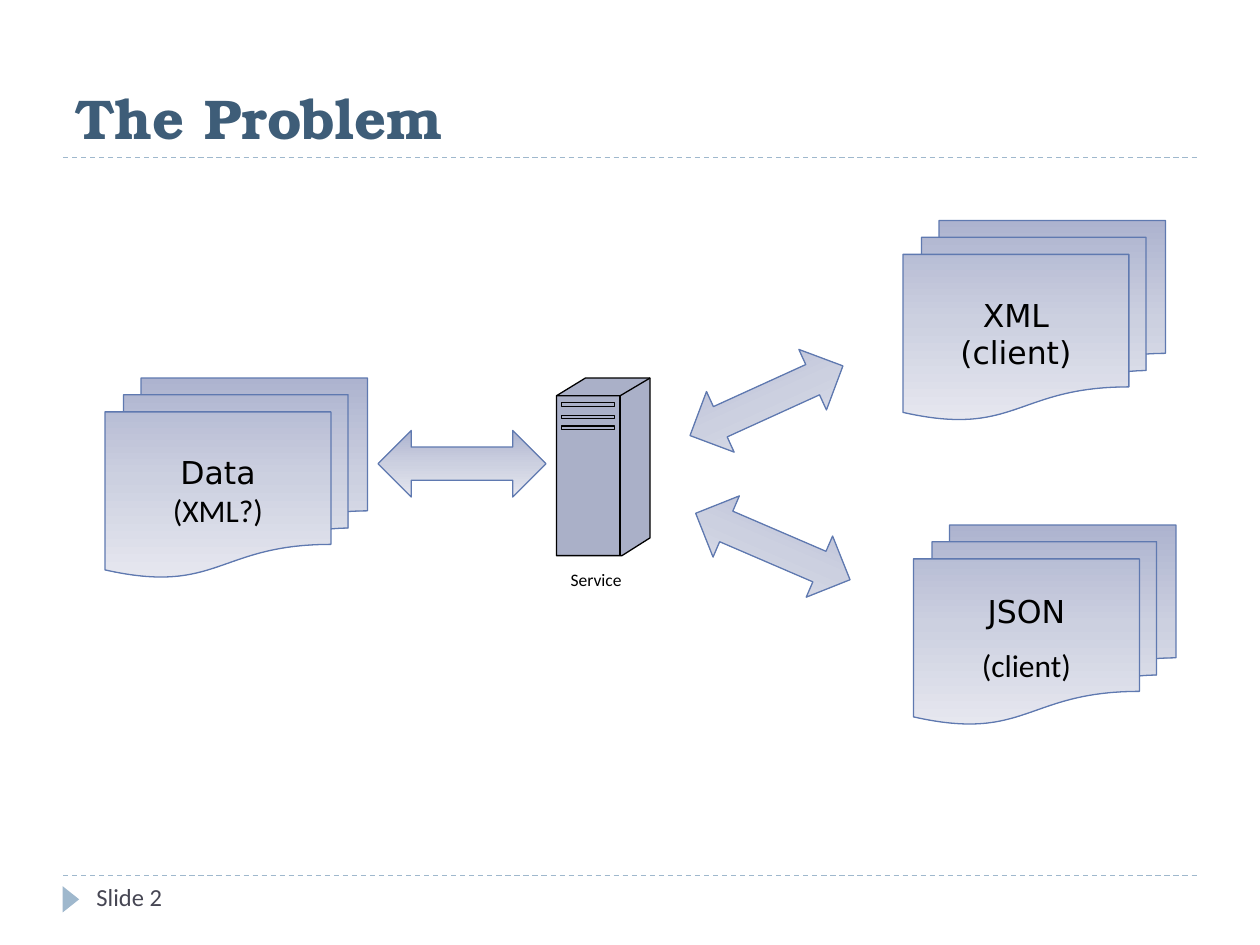
from copy import deepcopy
from dataclasses import dataclass

from lxml import etree
from pptx import Presentation
from pptx.dml.color import RGBColor
from pptx.enum import dml, shapes, text
from pptx.oxml import ns
from pptx.util import Pt


@dataclass(frozen=True)
class Theme:
    """Colours, fonts and type sizes."""
    rule: str = "9FB8CD"
    head: str = "3E5D78"
    foot: str = "464653"
    ink: str = "000000"
    edge: str = "5F79B0"
    steel: str = "AAB0C8"
    fade: tuple = ("ADB3CF", "CCD0E0", "E6E7EF")
    serif: str = "TeX Gyre Bonum"
    sans: str = "Calibri"
    wide: str = "DejaVu Sans"
    title: int = 32
    body: int = 18
    note: int = 14
    label: int = 10
    line: float = 0.75


T = Theme()
SHAPE = shapes.MSO_SHAPE


def rgb(code):
    """Turn a hex code into a colour."""
    return RGBColor.from_string(code)


def write(para, words, face, size, color, bold=False):
    """Add one formatted run to a paragraph."""
    run = para.add_run()
    run.text = words
    font = run.font
    font.name, font.size, font.bold = face, Pt(size), bold
    font.color.rgb = rgb(color)


def stroke(item, color):
    """Give a shape or connector a thin line."""
    item.line.color.rgb = rgb(color)
    item.line.width = Pt(T.line)


def shade(shape):
    """Give a shape the vertical fade and its edge."""
    shape.shadow.inherit = False
    shape.fill.gradient()
    shape.fill.gradient_angle = 270
    stops = shape._element.spPr.find(".//" + ns.qn("a:gsLst"))
    stops.insert(1, deepcopy(stops[0]))
    for i, (stop, color) in enumerate(zip(shape.fill.gradient_stops, T.fade)):
        stop.position = i / 2
        stop.color.rgb = rgb(color)
    stroke(shape, T.edge)


def rule(slide, left, top, width):
    """Draw a dashed line across the slide."""
    line = slide.shapes.add_connector(
        shapes.MSO_CONNECTOR.STRAIGHT, Pt(left), Pt(top), Pt(left + width), Pt(top))
    stroke(line, T.rule)
    line.line.dash_style = dml.MSO_LINE.DASH
    etree.SubElement(line._element.spPr, ns.qn("a:effectLst"))


def note(slide, box, words, size, color):
    """Place a line of text in a box."""
    frame = slide.shapes.add_textbox(*map(Pt, box)).text_frame
    frame.word_wrap = True
    write(frame.paragraphs[0], words, T.sans, size, color)


def header(slide, box, words):
    """Place the title with a rule below it."""
    left, top, width, height = box
    title = slide.shapes.title
    title.left, title.top, title.width, title.height = map(Pt, box)
    frame = title.text_frame
    frame.vertical_anchor = text.MSO_ANCHOR.BOTTOM
    para = frame.paragraphs[0]
    para.alignment = text.PP_ALIGN.LEFT
    write(para, words, T.serif, T.title, T.head, True)
    rule(slide, left, top + height, width)


def footer(slide, box, words):
    """Place the bottom rule, marker and slide number."""
    left, top, width, height = box
    rule(slide, left, top, width)
    mark = slide.shapes.add_shape(
        SHAPE.ISOSCELES_TRIANGLE, Pt(left - 3), Pt(top + 8.8), Pt(15), Pt(9.4))
    mark.rotation = 90
    mark.shadow.inherit = False
    mark.fill.solid()
    mark.fill.fore_color.rgb = rgb(T.rule)
    mark.line.fill.background()
    note(slide, (left + 12, top, 156, height), words, T.note, T.foot)


def stack(slide, box, paras):
    """Draw a pile of documents; each paragraph is a list of (words, face) lines."""
    pile = slide.shapes.add_shape(SHAPE.FLOWCHART_MULTIDOCUMENT, *map(Pt, box))
    shade(pile)
    frame = pile.text_frame
    frame.word_wrap = True
    frame.vertical_anchor = text.MSO_ANCHOR.MIDDLE
    for i, lines in enumerate(paras):
        para = frame.add_paragraph() if i else frame.paragraphs[0]
        para.alignment = text.PP_ALIGN.CENTER
        para.space_before = Pt(T.body / 2)
        for j, (words, face) in enumerate(lines):
            if j:
                para.add_line_break()
            write(para, words, face, T.body, T.ink)


def arrow(slide, box, turn):
    """Draw a two-way arrow turned by an angle."""
    shape = slide.shapes.add_shape(SHAPE.LEFT_RIGHT_ARROW, *map(Pt, box))
    shape.rotation = turn
    shade(shape)


def trace(slide, box, paths):
    """Draw one outline from paths given as fractions of a box."""
    left, top, width, height = box
    paths = [[(Pt(left + x * width), Pt(top + y * height)) for x, y in path]
             for path in paths]
    pen = slide.shapes.build_freeform(*paths[0][0])
    for i, path in enumerate(paths):
        if i:
            pen.move_to(*path[0])
        pen.add_line_segments(path[1:], close=False)
    shape = pen.convert_to_shape()
    shape.shadow.inherit = False
    stroke(shape, T.ink)
    return shape


def server(slide, box, words):
    """Draw a server tower with its label below."""
    left, top, width, height = box
    body = trace(slide, box, [[(0, 0.1), (0.31, 0), (1, 0), (1, 0.9),
                               (0.7, 1), (0, 1), (0, 0.1)]])
    body.fill.solid()
    body.fill.fore_color.rgb = rgb(T.steel)
    slots = [[(0.05, y), (0.62, y), (0.62, y + 0.02), (0.05, y + 0.02), (0.05, y)]
             for y in (0.14, 0.21, 0.27)]
    edges = [[(0, 0.1), (0.68, 0.1), (1, 0)], [(0.68, 0.1), (0.68, 1)]]
    trace(slide, box, edges + slots).fill.background()
    note(slide, (left + 1, top + height + 4, width + 12, 20), words, T.label, T.ink)


def main():
    """Build the slide and save it."""
    deck = Presentation()
    deck.slide_width, deck.slide_height = Pt(720), Pt(540)
    slide = deck.slides.add_slide(deck.slide_layouts[5])
    header(slide, (36, 12, 648, 78), "The Problem")
    footer(slide, (36, 500.4, 648, 28.8), "Slide 2")
    server(slide, (318, 216, 53.5, 101.5), "Service")
    piles = (
        (60, 216, [[("Data", T.wide), ("(XML?)", T.sans)]]),
        (516, 126, [[("XML", T.wide), ("(client)", T.wide)]]),
        (522, 300, [[("JSON", T.wide)], [("(client)", T.sans)]]),
    )
    for left, top, paras in piles:
        stack(slide, (left, top, 150, 114), paras)
    for left, top, turn in ((390, 210, 335.5), (216, 246, 0), (393.6, 293.3, 23.3)):
        arrow(slide, (left, top, 96, 38), turn)
    deck.save("out.pptx")


if __name__ == "__main__":
    main()
